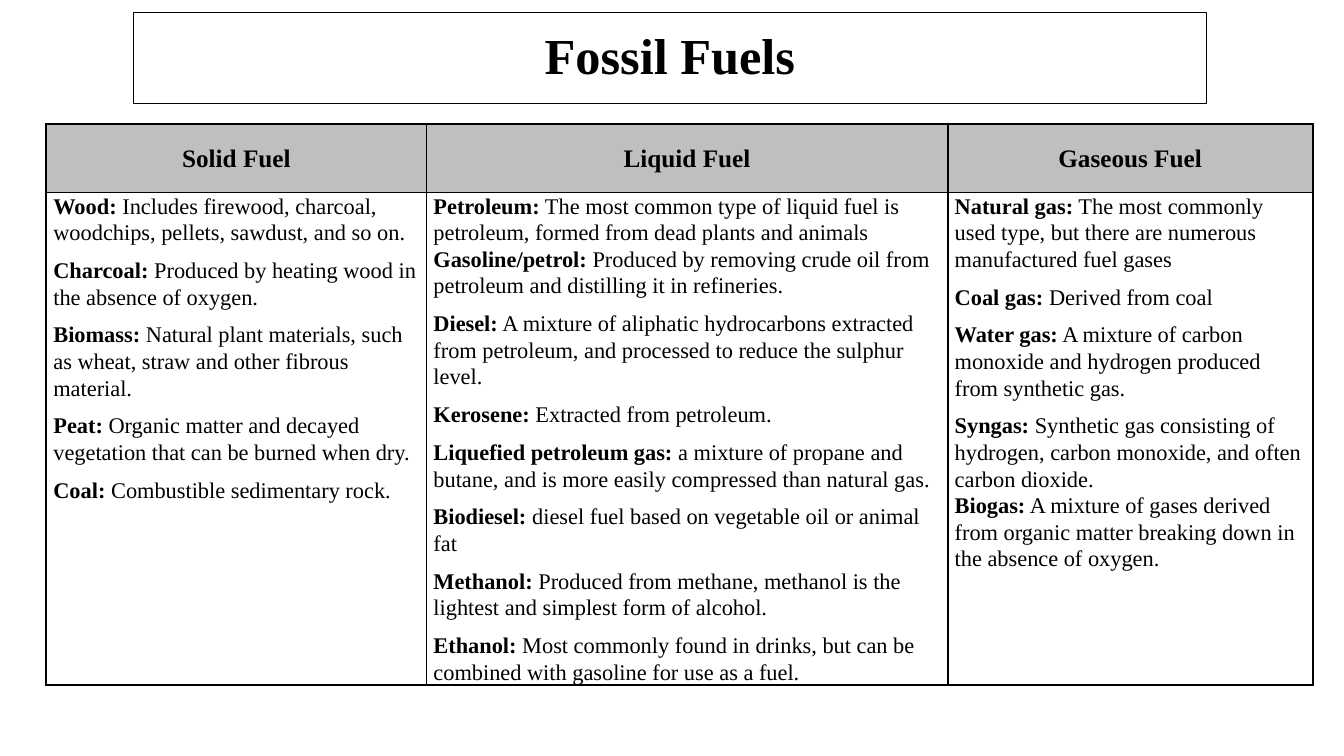
from collections import namedtuple
from lxml.etree import SubElement
from pptx import Presentation
from pptx.dml.color import RGBColor
from pptx.enum.text import MSO_ANCHOR, MSO_AUTO_SIZE, PP_ALIGN
from pptx.oxml.ns import qn
from pptx.util import Inches, Pt

Theme = namedtuple("Theme", "font ink band title head body frame rule")
THEME = Theme("Times New Roman", "000000", "BFBFBF", 36, 18, 16, 0.75, 1.5)
Box = namedtuple("Box", "left top width height")

WIDTHS = (3.77, 5.17, 3.62)
HEIGHTS = (0.68, 4.6)
TIGHT = ("Petroleum:", "Syngas:")
FUELS = {
    "Solid Fuel": [
        ("Wood:", "Includes firewood, charcoal, woodchips, pellets, sawdust, and so on."),
        ("Charcoal:", "Produced by heating wood in the absence of oxygen."),
        ("Biomass:", "Natural plant materials, such as wheat, straw and other fibrous material."),
        ("Peat:", "Organic matter and decayed vegetation that can be burned when dry."),
        ("Coal:", "Combustible sedimentary rock."),
    ],
    "Liquid Fuel": [
        ("Petroleum:", "The most common type of liquid fuel is petroleum, "
         "formed from dead plants and animals"),
        ("Gasoline/petrol:", "Produced by removing crude oil from petroleum "
         "and distilling it in refineries."),
        ("Diesel:", "A mixture of aliphatic hydrocarbons extracted from petroleum, "
         "and processed to reduce the sulphur level."),
        ("Kerosene:", "Extracted from petroleum."),
        ("Liquefied petroleum gas:", "a mixture of propane and butane, "
         "and is more easily compressed than natural gas."),
        ("Biodiesel:", "diesel fuel based on vegetable oil or animal fat"),
        ("Methanol:", "Produced from methane, methanol is the lightest "
         "and simplest form of alcohol."),
        ("Ethanol:", "Most commonly found in drinks, but can be combined "
         "with gasoline for use as a fuel."),
    ],
    "Gaseous Fuel": [
        ("Natural gas:", "The most commonly used type, but there are numerous "
         "manufactured fuel gases"),
        ("Coal gas:", "Derived from coal"),
        ("Water gas:", "A mixture of carbon monoxide and hydrogen produced from synthetic gas."),
        ("Syngas:", "Synthetic gas consisting of hydrogen, carbon monoxide, "
         "and often carbon dioxide."),
        ("Biogas:", "A mixture of gases derived from organic matter breaking down "
         "in the absence of oxygen."),
    ],
}


def style(font, size, bold):
    """Set the typeface, size, weight and colour of a font."""
    font.name, font.size, font.bold = THEME.font, Pt(size), bold
    font.color.rgb = RGBColor.from_string(THEME.ink)


def space(para, line, after):
    """Set the line spacing and the gap after a paragraph."""
    para.line_spacing, para.space_before, para.space_after = line, Pt(0), Pt(after)


def border(cell):
    """Rule all four sides of a cell."""
    props = cell._tc.get_or_add_tcPr()
    for side in ("lnL", "lnR", "lnT", "lnB"):
        line = SubElement(props, qn(f"a:{side}"), w=str(Pt(THEME.rule)))
        fill = SubElement(line, qn("a:solidFill"))
        SubElement(fill, qn("a:srgbClr"), val=THEME.ink)


def frame(cell):
    """Give a cell its rules and margins."""
    border(cell)
    cell.margin_left = cell.margin_right = Inches(0.07)
    cell.margin_top = cell.margin_bottom = 0


def head(cell, text):
    """Fill a heading cell."""
    frame(cell)
    cell.fill.solid()
    cell.fill.fore_color.rgb = RGBColor.from_string(THEME.band)
    cell.vertical_anchor = MSO_ANCHOR.MIDDLE
    para = cell.text_frame.paragraphs[0]
    para.text = text
    para.alignment = PP_ALIGN.CENTER
    space(para, 1.07, 8)
    style(para.runs[0].font, THEME.head, True)


def body(cell, items):
    """List named fuels in a cell."""
    frame(cell)
    cell.fill.background()
    cell.text_frame.text = "\n".join(name for name, _ in items)
    for para, (name, text) in zip(cell.text_frame.paragraphs, items):
        space(para, 1.07, 0 if name in TIGHT else 8)
        style(para.runs[0].font, THEME.body, True)
        run = para.add_run()
        run.text = f" {text}"
        style(run.font, THEME.body, False)


def title(slide, box, text):
    """Place the framed title in its box."""
    shape = slide.shapes.title
    shape.left, shape.top, shape.width, shape.height = map(Inches, box)
    shape.line.color.rgb = RGBColor.from_string(THEME.ink)
    shape.line.width = Pt(THEME.frame)
    words = shape.text_frame
    words.text = text
    words.word_wrap = True
    words.auto_size = MSO_AUTO_SIZE.NONE
    words.vertical_anchor = MSO_ANCHOR.MIDDLE
    para = words.paragraphs[0]
    para.alignment = PP_ALIGN.CENTER
    space(para, 0.9, 0)
    style(para.runs[0].font, THEME.title, True)


def grid(slide, box, fuels):
    """Place the fuel table in its box, one column per kind."""
    table = slide.shapes.add_table(len(HEIGHTS), len(fuels), *map(Inches, box)).table
    for row, high in zip(table.rows, HEIGHTS):
        row.height = Inches(high)
    for col, (kind, items) in enumerate(fuels.items()):
        table.columns[col].width = Inches(WIDTHS[col])
        head(table.cell(0, col), kind)
        body(table.cell(1, col), items)


def main():
    """Build and save the slide."""
    deck = Presentation()
    deck.slide_width, deck.slide_height = Inches(13.33), Inches(7.5)
    slide = deck.slides.add_slide(deck.slide_layouts[5])
    title(slide, Box(1.32, 0.12, 10.65, 0.91), "Fossil Fuels")
    grid(slide, Box(0.46, 1.23, sum(WIDTHS), sum(HEIGHTS)), FUELS)
    deck.save("out.pptx")


if __name__ == "__main__":
    main()
